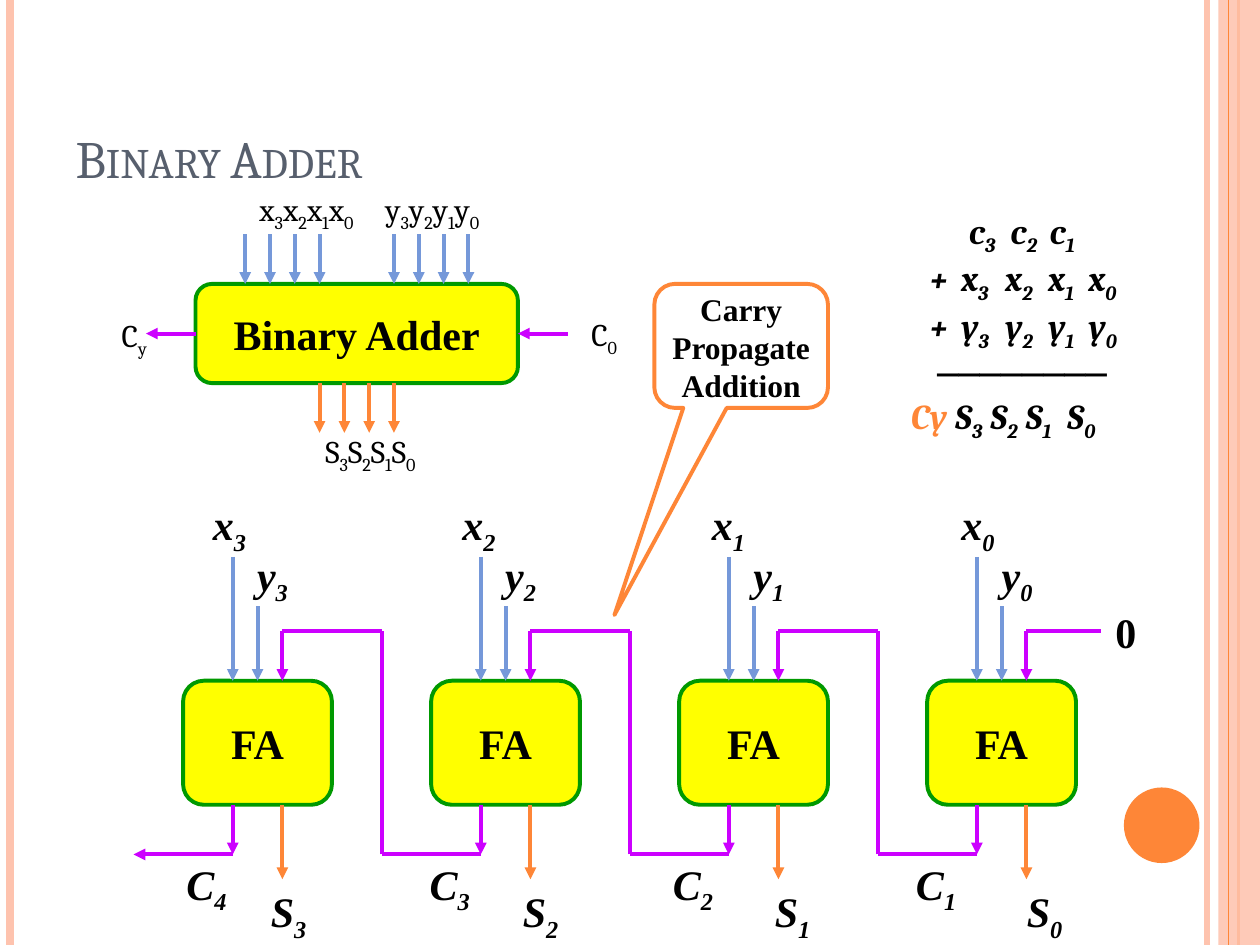
from lxml import etree
from pptx import Presentation, util as u
from pptx.dml.color import RGBColor
from pptx.enum import shapes, text
from pptx.oxml.ns import qn

COLORS = {"ink": "000000", "title": "575F6D", "peach": "FEC3AE", "orange": "FE8637",
          "blue": "7598D9", "carry": "CC00FF", "block": "FFFF00", "edge": "009900"}
RGB = {name: RGBColor.from_string(value) for name, value in COLORS.items()}
SERIF, ROMAN = "Cambria", "Times New Roman"
LEFT, CENTER = text.PP_ALIGN.LEFT, text.PP_ALIGN.CENTER
KIND = shapes.MSO_SHAPE

deck = Presentation()
deck.slide_width, deck.slide_height = u.Inches(10), u.Inches(7.5)
slide = deck.slides.add_slide(deck.slide_layouts[6])

# The diagram sits on a 5 mm grid
CELL = u.Mm(5)
GRID_LEFT, GRID_TOP = u.Inches(1.06), u.Inches(1.86)
STAGE = 10  # columns from one full adder to the next


def line(start, end, color, arrow=True, width=2.25, origin=(GRID_LEFT, GRID_TOP), cell=CELL):
    """Draw a straight line between two (column, row) points."""
    ends = [int(origin[axis] + point[axis] * cell) for point in (start, end) for axis in (0, 1)]
    connector = slide.shapes.add_connector(shapes.MSO_CONNECTOR.STRAIGHT, *ends)
    connector.line.color.rgb = RGB[color]
    connector.line.width = u.Pt(width)
    if arrow:
        etree.SubElement(connector.line._get_or_add_ln(), qn("a:tailEnd"), type="triangle")
    etree.SubElement(connector._element.spPr, qn("a:effectLst"))
    return connector


def write(frame, rows, size, font, align=CENTER, tabs=(), color="ink", bold=False, italic=False):
    """Fill a frame; text between bars is subscript, tabs holds stops in inches per row."""
    frame.word_wrap = True
    frame.margin_left = frame.margin_right = frame.margin_top = frame.margin_bottom = 0
    for index, row in enumerate(rows):
        paragraph = frame.paragraphs[0] if index == 0 else frame.add_paragraph()
        paragraph.alignment = align
        if tabs:
            stops = etree.SubElement(paragraph._p.get_or_add_pPr(), qn("a:tabLst"))
            for stop in tabs[index]:
                etree.SubElement(stops, qn("a:tab"), pos=str(u.Inches(stop)), algn="l")
        for part, content in enumerate(row.split("|")):
            if not content:
                continue
            run = paragraph.add_run()
            run.text = content
            run.font.size, run.font.name = u.Pt(size), font
            run.font.bold, run.font.italic = bold, italic
            run.font.color.rgb = RGB[color]
            if part % 2:
                run.font._element.set("baseline", "-25000")


# Side bands and disc
INCH = {"origin": (0, 0), "cell": u.Inches(1), "arrow": False}
for x, color, width in [(9.58, "peach", 3), (0.08, "peach", 4.5), (9.83, "orange", 1.5)]:
    line((x, 0), (x, 7.5), color, width=width, **INCH)
for kind, area, color in [(KIND.RECTANGLE, (9.67, 0, 0.33, 7.5), "peach"),
                          (KIND.OVAL, (8.92, 6.25, 0.6, 0.6), "orange")]:
    ornament = slide.shapes.add_shape(kind, *map(u.Inches, area))
    ornament.shadow.inherit = False
    ornament.fill.solid()
    ornament.fill.fore_color.rgb = RGB[color]
    ornament.line.fill.background()
    if kind == KIND.RECTANGLE:
        tint = ornament._element.spPr.find(".//" + qn("a:srgbClr"))
        etree.SubElement(tint, qn("a:alpha"), val="87000")
line((9.75, 0), (9.75, 7.5), "orange", width=0.75, **INCH)

# Title
title = slide.shapes.add_textbox(u.Inches(0.6), u.Inches(0.3), u.Inches(8.22), u.Inches(1.2)).text_frame
title.vertical_anchor = text.MSO_ANCHOR.BOTTOM
write(title, ["Binary Adder"], 30, SERIF, LEFT, color="title")
title.paragraphs[0].runs[0].font._element.set("cap", "small")

# Blocks: column, row, columns wide, rows high, label
blocks = []
for column, row, wide, high, label in [(2.5, 2, 13, 4, "Binary Adder")] + [
        (2 + STAGE * stage, 18, 6, 5, "FA") for stage in range(4)]:
    block = slide.shapes.add_shape(KIND.ROUNDED_RECTANGLE, int(GRID_LEFT + column * CELL),
                                   GRID_TOP + row * CELL, wide * CELL, high * CELL)
    block.shadow.inherit = False
    block.fill.solid()
    block.fill.fore_color.rgb = RGB["block"]
    block.line.color.rgb = RGB["edge"]
    block.line.width = u.Pt(2.25)
    block.text_frame.vertical_anchor = text.MSO_ANCHOR.MIDDLE
    write(block.text_frame, [label], 24, ROMAN, bold=True)
    blocks.append(block)
adder, *full_adders = blocks

# Adder inputs, outputs and carries
for bit in range(4):
    for first in (4.5, 10.5):
        line((first + bit, 0), (first + bit, 2), "blue")
    line((7.5 + bit, 6), (7.5 + bit, 8), "orange")
line((17.5, 4), (15.5, 4), "carry").end_connect(adder, 3)
line((2.5, 4), (0.5, 4), "carry").begin_connect(adder, 1)

# Full adder stages, with the carry rippling from right to left
for stage, full_adder in enumerate(full_adders):
    column = STAGE * stage
    line((column + 4, 13), (column + 4, 18), "blue")
    line((column + 5, 15), (column + 5, 18), "blue").end_connect(full_adder, 0)
    line((column + 6, 16), (column + 6, 18), "carry")
    line((column + 6, 23), (column + 6, 26), "orange")
    line((column + 4, 23), (column + 4, 25), "carry")
    line((column + 4, 25), (column, 25), "carry", arrow=stage == 0)
    if stage:
        line((column, 25), (column, 16), "carry", arrow=False)
        line((column, 16), (column - 4, 16), "carry", arrow=False)
line((39, 16), (36, 16), "carry", arrow=False)

# Stage labels: left, top, pitch
for left, top, pitch, row in [(1.69, 3.96, 1.98, "x|3|\tx|2|\tx|1|\tx|0|"),
                              (2.04, 4.36, 1.97, "y|3|\ty|2|\ty|1|\ty|0|"),
                              (2.15, 7.03, 2, "S|3|\tS|2|\tS|1|\tS|0|"),
                              (1.48, 6.81, 1.93, "C|4|\tC|3|\tC|2|\tC|1|")]:
    labels = slide.shapes.add_textbox(*map(u.Inches, (left, top, 6.5, 0.4)))
    write(labels.text_frame, [row], 24, ROMAN, LEFT, [[pitch * n for n in (1, 2, 3)]],
          bold=True, italic=True)
carry_in = slide.shapes.add_textbox(*map(u.Inches, (8.74, 4.81, 0.39, 0.4)))
write(carry_in.text_frame, ["0"], 24, ROMAN, bold=True)

# Adder labels
for left, top, width, row, align, tabs in [
        (2.06, 1.51, 2, "x|3|x|2|x|1|x|0|\ty|3|y|2|y|1|y|0|", LEFT, [[1]]),
        (2.35, 3.43, 1.18, "S|3|S|2|S|1|S|0|", CENTER, ()),
        (4.6, 2.5, 0.39, "C|0|", CENTER, ()),
        (0.87, 2.51, 0.39, "C|y|", CENTER, ())]:
    label = slide.shapes.add_textbox(*map(u.Inches, (left, top, width, 0.3)))
    write(label.text_frame, [row], 18, SERIF, align, tabs)

# Column addition
addition = slide.shapes.add_textbox(*map(u.Inches, (7.23, 1.66, 1.9, 1.68))).text_frame
operand_stops = (0.15, 0.4, 0.75, 1.09, 1.41)
write(addition,
      ["\tc|3|\tc|2|\tc|1|",
       "\t+\tx|3|\tx|2|\tx|1|\tx|0|",
       "\t+\ty|3|\ty|2|\ty|1|\ty|0|",
       "\t────────",
       "Cy||\tS|3|\tS|2|\tS|1|\tS|0|"],
      20, SERIF, LEFT,
      [(0.46, 0.79, 1.1), operand_stops, operand_stops, (0.21,), (0.35, 0.63, 0.91, 1.24)],
      bold=True, italic=True)
addition.paragraphs[-1].runs[0].font.color.rgb = RGB["orange"]

# Callout pointing at the carry chain
callout = slide.shapes.add_shape(KIND.ROUNDED_RECTANGULAR_CALLOUT, GRID_LEFT + 21 * CELL,
                                 GRID_TOP + 2 * CELL, 7 * CELL, 5 * CELL)
callout.adjustments[0], callout.adjustments[1] = -0.73, 2.17
callout.shadow.inherit = False
callout.fill.background()
callout.line.color.rgb = RGB["orange"]
callout.line.width = u.Pt(2.25)
callout.text_frame.vertical_anchor = text.MSO_ANCHOR.TOP
write(callout.text_frame, ["Carry Propagate Addition"], 18, ROMAN, bold=True)

deck.save("out.pptx")
